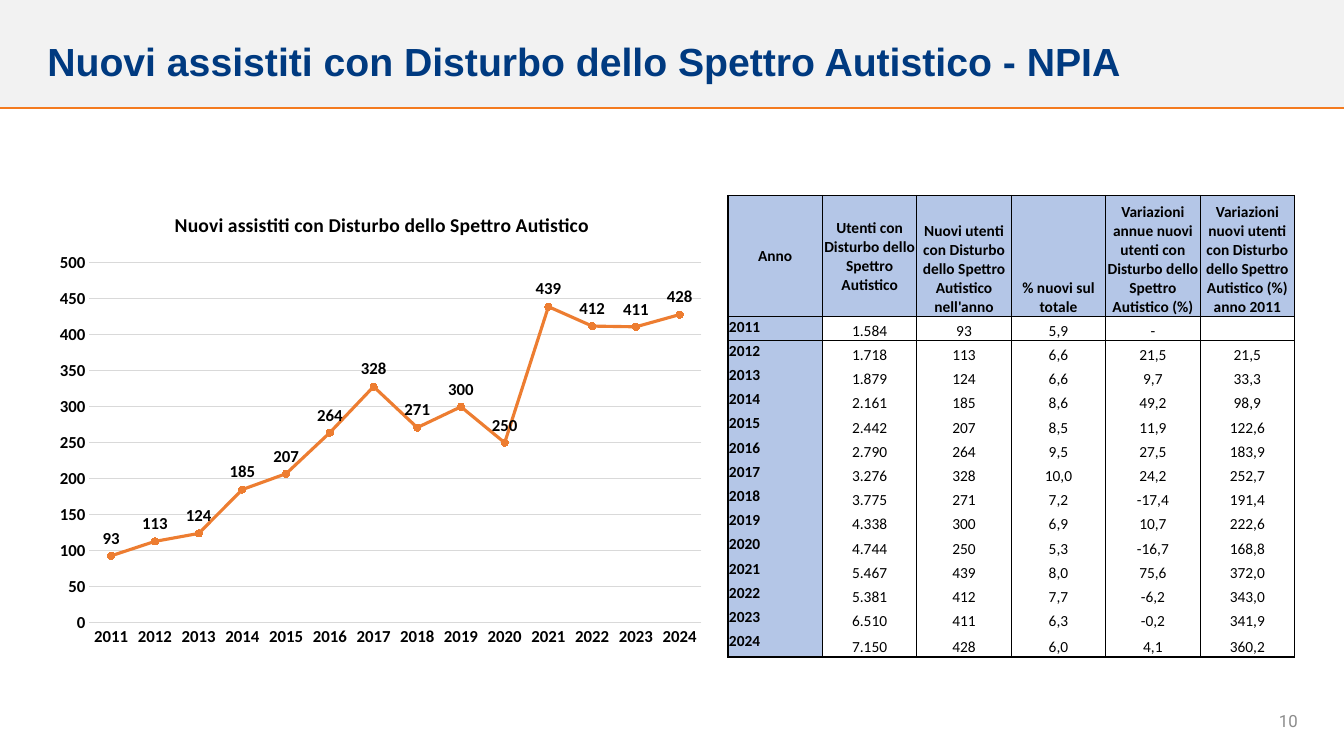
from lxml.etree import SubElement
from pptx import Presentation
from pptx.chart.data import CategoryChartData
from pptx.dml.color import RGBColor
from pptx.enum.chart import XL_CHART_TYPE, XL_LABEL_POSITION, XL_MARKER_STYLE, XL_TICK_MARK
from pptx.enum.shapes import MSO_CONNECTOR, MSO_SHAPE
from pptx.enum.text import MSO_ANCHOR, MSO_AUTO_SIZE, PP_ALIGN
from pptx.oxml import parse_xml
from pptx.oxml.ns import nsdecls, qn
from pptx.util import Inches, Pt

TITLE = "Nuovi assistiti con Disturbo dello Spettro Autistico - NPIA"
CHART_TITLE = "Nuovi assistiti con Disturbo dello Spettro Autistico"
PAGE_NUMBER = "10"
HEADER = [
    ("Anno", MSO_ANCHOR.MIDDLE),
    ("Utenti con Disturbo dello Spettro Autistico", MSO_ANCHOR.MIDDLE),
    ("Nuovi utenti con Disturbo dello Spettro Autistico nell'anno", MSO_ANCHOR.BOTTOM),
    ("% nuovi sul totale", MSO_ANCHOR.BOTTOM),
    ("Variazioni annue nuovi utenti con Disturbo dello Spettro Autistico (%)", MSO_ANCHOR.BOTTOM),
    ("Variazioni nuovi utenti con Disturbo dello Spettro Autistico (%) anno 2011", MSO_ANCHOR.BOTTOM),
]
YEARS = [
    ("2011", "1.584", "93", "5,9", "-", ""),
    ("2012", "1.718", "113", "6,6", "21,5", "21,5"),
    ("2013", "1.879", "124", "6,6", "9,7", "33,3"),
    ("2014", "2.161", "185", "8,6", "49,2", "98,9"),
    ("2015", "2.442", "207", "8,5", "11,9", "122,6"),
    ("2016", "2.790", "264", "9,5", "27,5", "183,9"),
    ("2017", "3.276", "328", "10,0", "24,2", "252,7"),
    ("2018", "3.775", "271", "7,2", "-17,4", "191,4"),
    ("2019", "4.338", "300", "6,9", "10,7", "222,6"),
    ("2020", "4.744", "250", "5,3", "-16,7", "168,8"),
    ("2021", "5.467", "439", "8,0", "75,6", "372,0"),
    ("2022", "5.381", "412", "7,7", "-6,2", "343,0"),
    ("2023", "6.510", "411", "6,3", "-0,2", "341,9"),
    ("2024", "7.150", "428", "6,0", "4,1", "360,2"),
]

BLACK = RGBColor(0, 0, 0)
WHITE = RGBColor(0xFF, 0xFF, 0xFF)
BAND_GREY = RGBColor(0xF2, 0xF2, 0xF2)
RULE_ORANGE = RGBColor(0xF4, 0x7B, 0x20)
TITLE_BLUE = RGBColor(0x00, 0x3A, 0x80)
NUMBER_GREY = RGBColor(0x8C, 0x8C, 0x8C)
GRID_GREY = RGBColor(0xD9, 0xD9, 0xD9)
SERIES_ORANGE = RGBColor(0xED, 0x7D, 0x31)
CELL_BLUE = RGBColor(0xB4, 0xC6, 0xE7)

TITLE_FONT = {"name": "Arial", "size": Pt(28), "bold": True}
NUMBER_FONT = {"name": "Roboto", "size": Pt(12)}
CHART_FONT = {"name": "Calibri", "size": Pt(12), "bold": True}
CHART_TITLE_FONT = {**CHART_FONT, "size": Pt(14)}
HEAD_FONT = {"name": "Calibri", "size": Pt(11), "bold": True}
BODY_FONT = {**HEAD_FONT, "bold": False}
CELL_MARGINS = {
    "margin_left": Inches(0.01), "margin_top": Inches(0.01),
    "margin_right": Inches(0.01), "margin_bottom": 0,
}
PLOT_BOX = {"x": 0.06, "y": 0.15, "w": 0.92, "h": 0.78}
NO_STYLE = "{2D5ABB26-0587-4C30-8999-92F81FD0307C}"


def apply(target, values):
    """Set every attribute named in a dict."""
    for name, value in values.items():
        setattr(target, name, value)


def style_font(font, values, color):
    """Format a font and give it a solid colour."""
    apply(font, values)
    font.fill.solid()
    font.fill.fore_color.rgb = color


def style_line(line, color, width):
    """Give a line a solid colour and a width in points."""
    line.fill.solid()
    line.fill.fore_color.rgb = color
    line.width = Pt(width)


def write(frame, text, font, color, align=PP_ALIGN.LEFT):
    """Write one formatted paragraph into a text frame."""
    para = frame.paragraphs[0]
    para.alignment = align
    span = para.add_run()
    span.text = text
    style_font(span.font, font, color)
    return para


def add_heading(page, width):
    """Add the grey band, its orange rule and the title."""
    band = page.shapes.add_shape(MSO_SHAPE.RECTANGLE, 0, Inches(-0.03), width, Inches(1.1))
    band.shadow.inherit = False
    band.fill.solid()
    band.fill.fore_color.rgb = BAND_GREY
    band.line.fill.background()
    rule = page.shapes.add_connector(MSO_CONNECTOR.STRAIGHT, 0, Inches(1.07), width, Inches(1.07))
    style_line(rule.line, RULE_ORANGE, 1)
    SubElement(rule.element.spPr, qn("a:effectLst"))
    title = page.shapes.title
    apply(title, {"left": Inches(0.37), "top": Inches(0.19),
                  "width": Inches(12.6), "height": Inches(0.89)})
    apply(title.text_frame, {"word_wrap": True, "auto_size": MSO_AUTO_SIZE.NONE,
                             "vertical_anchor": MSO_ANCHOR.MIDDLE})
    write(title.text_frame, TITLE, TITLE_FONT, TITLE_BLUE).line_spacing = 0.9
    title.element.getparent().append(title.element)


def add_page_number(page):
    """Add the page number at the lower right."""
    box = page.shapes.add_textbox(Inches(12.32), Inches(6.95), Inches(0.65), Inches(0.4))
    apply(box.text_frame, {"word_wrap": True, "vertical_anchor": MSO_ANCHOR.MIDDLE})
    write(box.text_frame, PAGE_NUMBER, NUMBER_FONT, NUMBER_GREY, PP_ALIGN.RIGHT)


def add_new_users_chart(page):
    """Add the line chart of new users per year."""
    data = CategoryChartData()
    data.categories = [year[0] for year in YEARS]
    data.add_series("Nuovi utenti", [int(year[2]) for year in YEARS])
    chart = page.shapes.add_chart(XL_CHART_TYPE.LINE_MARKERS, Inches(0.49), Inches(1.92),
                                  Inches(6.6), Inches(4.58), data).chart
    style_font(chart.font, CHART_FONT, BLACK)
    chart.has_legend = False
    chart.has_title = True
    write(chart.chart_title.text_frame, CHART_TITLE, CHART_TITLE_FONT, BLACK, PP_ALIGN.CENTER)

    for axis in (chart.category_axis, chart.value_axis):
        apply(axis, {"major_tick_mark": XL_TICK_MARK.NONE, "minor_tick_mark": XL_TICK_MARK.NONE})
        style_font(axis.tick_labels.font, CHART_FONT, BLACK)
    style_line(chart.category_axis.format.line, GRID_GREY, 0.75)
    apply(chart.value_axis, {"minimum_scale": 0, "maximum_scale": 500, "major_unit": 50})
    chart.value_axis.format.line.fill.background()
    style_line(chart.value_axis.major_gridlines.format.line, GRID_GREY, 0.75)

    plot = chart.plots[0]
    plot.vary_by_categories = False
    series = plot.series[0]
    series.smooth = False
    style_line(series.format.line, SERIES_ORANGE, 2.25)
    apply(series.marker, {"style": XL_MARKER_STYLE.CIRCLE, "size": 5})
    series.marker.format.fill.solid()
    series.marker.format.fill.fore_color.rgb = SERIES_ORANGE
    style_line(series.marker.format.line, SERIES_ORANGE, 0.75)
    apply(series.data_labels, {"show_value": True, "position": XL_LABEL_POSITION.ABOVE})
    style_font(series.data_labels.font, CHART_FONT, BLACK)

    plot_area = next(chart.element.iter(qn("c:plotArea")))
    for layout in plot_area.findall(qn("c:layout")):
        plot_area.remove(layout)
    sizes = "".join(f'<c:{side} val="{share}"/>' for side, share in PLOT_BOX.items())
    plot_area.insert(0, parse_xml(
        f'<c:layout {nsdecls("c")}><c:manualLayout><c:layoutTarget val="inner"/>'
        f'<c:xMode val="edge"/><c:yMode val="edge"/>{sizes}</c:manualLayout></c:layout>'))


def add_users_table(page):
    """Add the table of users and yearly changes."""
    last = len(YEARS)
    frame = page.shapes.add_table(last + 1, len(HEADER), Inches(7.22), Inches(1.94),
                                  Inches(5.62), Inches(4.58))
    table = frame.table
    apply(table, {"first_row": False, "horz_banding": False})
    next(frame.element.iter(qn("a:tableStyleId"))).text = NO_STYLE
    for column in table.columns:
        column.width = Inches(5.62 / len(HEADER))
    for index, row in enumerate(table.rows):
        row.height = Inches({0: 1.2, last: 0.26}.get(index, 0.24))

    texts = [text for text, anchor in HEADER] + [text for year in YEARS for text in year]
    cells = zip(texts, table.iter_cells(), frame.element.iter(qn("a:tc")))
    for index, (text, cell, element) in enumerate(cells):
        row, column = divmod(index, len(HEADER))
        marked = row == 0 or column == 0
        body_anchor = MSO_ANCHOR.TOP if column == 0 else MSO_ANCHOR.BOTTOM
        apply(cell, CELL_MARGINS)
        cell.vertical_anchor = HEADER[column][1] if row == 0 else body_anchor
        sides = ["lnL", "lnR"] + ["lnT"] * (row < 2) + ["lnB"] * (row in (0, last))
        for side in sides:
            border = SubElement(element.get_or_add_tcPr(), qn(f"a:{side}"), w=str(Pt(1)))
            SubElement(SubElement(border, qn("a:solidFill")), qn("a:srgbClr"), val=str(BLACK))
        cell.fill.solid()
        cell.fill.fore_color.rgb = CELL_BLUE if marked else WHITE
        if text:
            align = PP_ALIGN.LEFT if row and column == 0 else PP_ALIGN.CENTER
            write(cell.text_frame, text, HEAD_FONT if marked else BODY_FONT, BLACK, align)
        else:
            SubElement(next(element.iter(qn("a:p"))), qn("a:endParaRPr"), sz="1100")


def main():
    """Build the slide and save it."""
    deck = Presentation()
    deck.slide_width, deck.slide_height = Inches(13.33), Inches(7.5)
    page = deck.slides.add_slide(deck.slide_layouts[5])
    add_heading(page, deck.slide_width)
    add_page_number(page)
    add_new_users_chart(page)
    add_users_table(page)
    deck.save("out.pptx")


if __name__ == "__main__":
    main()
